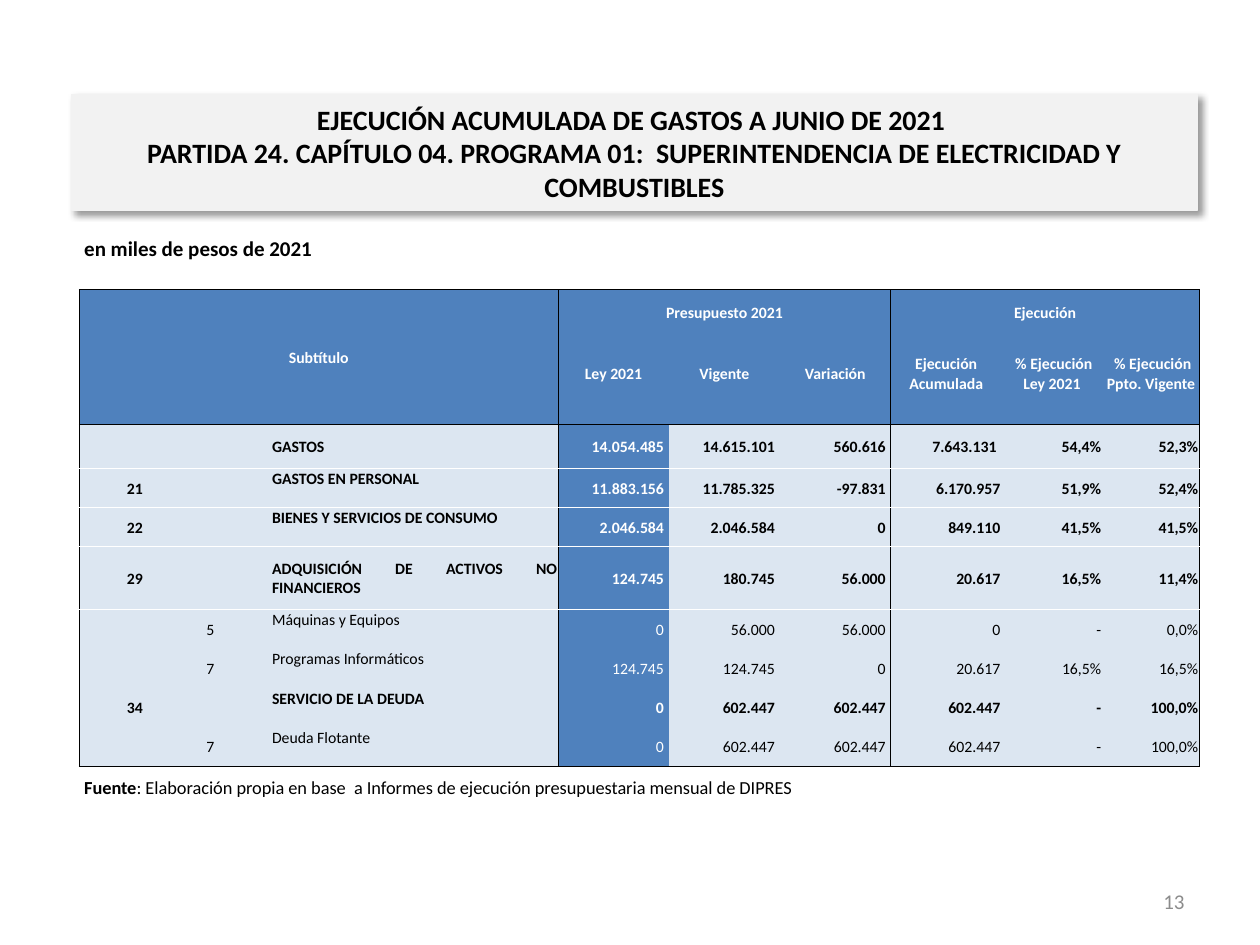
from dataclasses import dataclass

from lxml.etree import SubElement
from pptx import Presentation
from pptx.dml.color import RGBColor
from pptx.enum.text import MSO_ANCHOR, MSO_AUTO_SIZE, PP_ALIGN
from pptx.oxml.ns import qn
from pptx.util import Inches, Pt


@dataclass(frozen=True)
class Theme:
    font: str = "Calibri"
    black: str = "000000"
    white: str = "FFFFFF"
    blue: str = "4F81BD"
    pale: str = "DCE6F1"
    panel: str = "F2F2F2"
    gray: str = "8C8C8C"
    title: float = 16
    unit: float = 12
    source: float = 10.5
    cell: float = 9
    rule: float = 0.5


@dataclass(frozen=True)
class Box:
    left: float
    top: float
    width: float
    height: float

    def place(self) -> tuple:
        return tuple(map(Inches, (self.left, self.top, self.width, self.height)))


@dataclass(frozen=True)
class Line:
    """One budget line; a code is a subtitle (bold) or an item (plain)."""
    code: str
    item: str
    name: str
    values: str
    height: float = 0.31
    anchor: MSO_ANCHOR = MSO_ANCHOR.TOP


THEME = Theme()
MID = MSO_ANCHOR.MIDDLE
COLS = [0.88, 0.32, 0.32, 2.28] + [0.88] * 4 + [0.8, 0.77]
HEADS = ["Ley 2021", "Vigente", "Variación", "Ejecución Acumulada",
         " % Ejecución Ley 2021", " % Ejecución Ppto. Vigente"]
LINES = [
    Line("", "", "GASTOS",
         "14.054.485 14.615.101 560.616 7.643.131 54,4% 52,3%", 0.35, MID),
    Line("21", "", "GASTOS EN PERSONAL",
         "11.883.156 11.785.325 -97.831 6.170.957 51,9% 52,4%"),
    Line("22", "", "BIENES Y SERVICIOS DE CONSUMO",
         "2.046.584 2.046.584 0 849.110 41,5% 41,5%"),
    Line("29", "", "ADQUISICIÓN DE ACTIVOS NO FINANCIEROS",
         "124.745 180.745 56.000 20.617 16,5% 11,4%", 0.5, MID),
    Line("", "5", "Máquinas y Equipos", "0 56.000 56.000 0 - 0,0%"),
    Line("", "7", "Programas Informáticos",
         "124.745 124.745 0 20.617 16,5% 16,5%"),
    Line("34", "", "SERVICIO DE LA DEUDA", "0 602.447 602.447 602.447 - 100,0%"),
    Line("", "7", "Deuda Flotante", "0 602.447 602.447 602.447 - 100,0%"),
]
ROWS = [0.26, 0.81] + [line.height for line in LINES]
UPRIGHT = {col: THEME.black for col in (0, 4, 7, len(COLS))}
LEVEL = ({row: THEME.black for row in (0, 2, len(ROWS))}
         | {row: THEME.white for row in range(3, 7)})


def style(para, size: float, color: str, bold: bool | None = None,
          align: PP_ALIGN = PP_ALIGN.LEFT) -> None:
    para.alignment = align
    font = para.font
    font.name, font.size, font.bold = THEME.font, Pt(size), bold
    font.color.rgb = RGBColor.from_string(color)


def add_text(slide, box: Box, size: float, color: str, *runs: tuple[str, bool],
             align: PP_ALIGN = PP_ALIGN.LEFT,
             anchor: MSO_ANCHOR = MSO_ANCHOR.TOP) -> None:
    frame = slide.shapes.add_textbox(*box.place()).text_frame
    frame.word_wrap, frame.vertical_anchor = True, anchor
    para = frame.paragraphs[0]
    style(para, size, color, align=align)
    for text, bold in runs:
        run = para.add_run()
        run.text, run.font.bold = text, bold


def add_title(slide, box: Box, text: str) -> None:
    shape = slide.shapes.title
    shape.left, shape.top, shape.width, shape.height = box.place()
    shape.fill.solid()
    shape.fill.fore_color.rgb = RGBColor.from_string(THEME.panel)
    shape.line.color.rgb = RGBColor.from_string(THEME.panel)
    shape.line.width = Pt(0.75)
    effects = SubElement(shape._element.spPr, qn("a:effectLst"))
    shadow = SubElement(effects, qn("a:outerShdw"), blurRad=str(Pt(4)),
                        dist=str(Pt(3)), dir="2700000", algn="tl", rotWithShape="0")
    tint = SubElement(shadow, qn("a:srgbClr"), val=THEME.black)
    SubElement(tint, qn("a:alpha"), val="40000")
    frame = shape.text_frame
    frame.text = text
    frame.auto_size, frame.word_wrap = MSO_AUTO_SIZE.NONE, True
    frame.vertical_anchor = MID
    style(frame.paragraphs[0], THEME.title, THEME.black, True, PP_ALIGN.CENTER)


def rule_cell(cell, row: int, col: int) -> None:
    """Draw the four cell edges from the table's ruling."""
    edges = {"L": UPRIGHT.get(col), "R": UPRIGHT.get(col + cell.span_width),
             "T": LEVEL.get(row), "B": LEVEL.get(row + cell.span_height)}
    for side, color in edges.items():
        line = SubElement(cell._tc.get_or_add_tcPr(), qn(f"a:ln{side}"),
                          w=str(Pt(THEME.rule)))
        if color:
            fill = SubElement(line, qn("a:solidFill"))
            SubElement(fill, qn("a:srgbClr"), val=color)
        else:
            SubElement(line, qn("a:noFill"))


def fill_cell(cell, text: str, back: str, color: str, bold: bool,
              align: PP_ALIGN, anchor: MSO_ANCHOR = MID, pad: float = 0.01) -> None:
    cell.fill.solid()
    cell.fill.fore_color.rgb = RGBColor.from_string(back)
    cell.margin_left = cell.margin_top = Inches(0.01)
    cell.margin_right, cell.margin_bottom = Inches(pad), 0
    cell.vertical_anchor = anchor
    cell.text = text
    para = cell.text_frame.paragraphs[0]
    if not text:
        para._p.get_or_add_endParaRPr().set("sz", str(int(THEME.cell * 100)))
    style(para, THEME.cell, color, bold, align)


def fill_line(table, row: int, line: Line) -> None:
    bold = not line.item
    for col, text in enumerate((line.code, line.item, "")):
        fill_cell(table.cell(row, col), text, THEME.pale, THEME.black, bold,
                  PP_ALIGN.CENTER)
    fill_cell(table.cell(row, 3), line.name, THEME.pale, THEME.black, bold,
              PP_ALIGN.JUSTIFY, line.anchor)
    for col, text in enumerate(line.values.split(), 4):
        back, color = ((THEME.blue, THEME.white) if col == 4
                       else (THEME.pale, THEME.black))
        pad = 0.04 if col < 7 or (row, col) == (2, 7) else 0.01
        fill_cell(table.cell(row, col), text, back, color, bold,
                  PP_ALIGN.RIGHT, pad=pad)


def add_budget(slide, left: float, top: float) -> None:
    box = Box(left, top, sum(COLS), sum(ROWS))
    table = slide.shapes.add_table(len(ROWS), len(COLS), *box.place()).table
    table.first_row = table.horz_banding = False
    for col, width in zip(table.columns, COLS):
        col.width = Inches(width)
    for row, height in zip(table.rows, ROWS):
        row.height = Inches(height)
    for start, end in (((0, 0), (1, 3)), ((0, 4), (0, 6)), ((0, 7), (0, 9))):
        table.cell(*start).merge(table.cell(*end))
    for row in range(len(ROWS)):
        for col in range(len(COLS)):
            rule_cell(table.cell(row, col), row, col)
    heads = {(0, 0): "Subtítulo", (0, 4): "Presupuesto 2021", (0, 7): "Ejecución"}
    heads |= {(1, col): text for col, text in enumerate(HEADS, 4)}
    for (row, col), text in heads.items():
        anchor = MSO_ANCHOR.BOTTOM if row == 0 and col else MID
        fill_cell(table.cell(row, col), text, THEME.blue, THEME.white, True,
                  PP_ALIGN.CENTER, anchor)
    for row, line in enumerate(LINES, 2):
        fill_line(table, row, line)


def main() -> None:
    deck = Presentation()
    deck.slide_width, deck.slide_height = Inches(10), Inches(7.5)
    slide = deck.slides.add_slide(deck.slide_layouts[5])
    add_title(slide, Box(0.57, 0.75, 8.93, 0.92),
              "EJECUCIÓN ACUMULADA DE GASTOS A JUNIO DE 2021 \v"
              "PARTIDA 24. CAPÍTULO 04. PROGRAMA 01:  SUPERINTENDENCIA DE "
              "ELECTRICIDAD Y COMBUSTIBLES")
    add_text(slide, Box(0.57, 1.82, 8.61, 0.32), THEME.unit, THEME.black,
             ("en miles de pesos de 2021", True))
    add_budget(slide, 0.63, 2.3)
    add_text(slide, Box(0.57, 6.11, 8.53, 0.24), THEME.source, THEME.black,
             ("Fuente", True),
             (": Elaboración propia en base  a Informes de ejecución "
              "presupuestaria mensual de DIPRES", False))
    add_text(slide, Box(7.17, 6.95, 2.33, 0.4), THEME.unit, THEME.gray,
             ("13", False), align=PP_ALIGN.RIGHT, anchor=MID)
    deck.save("out.pptx")


if __name__ == "__main__":
    main()
